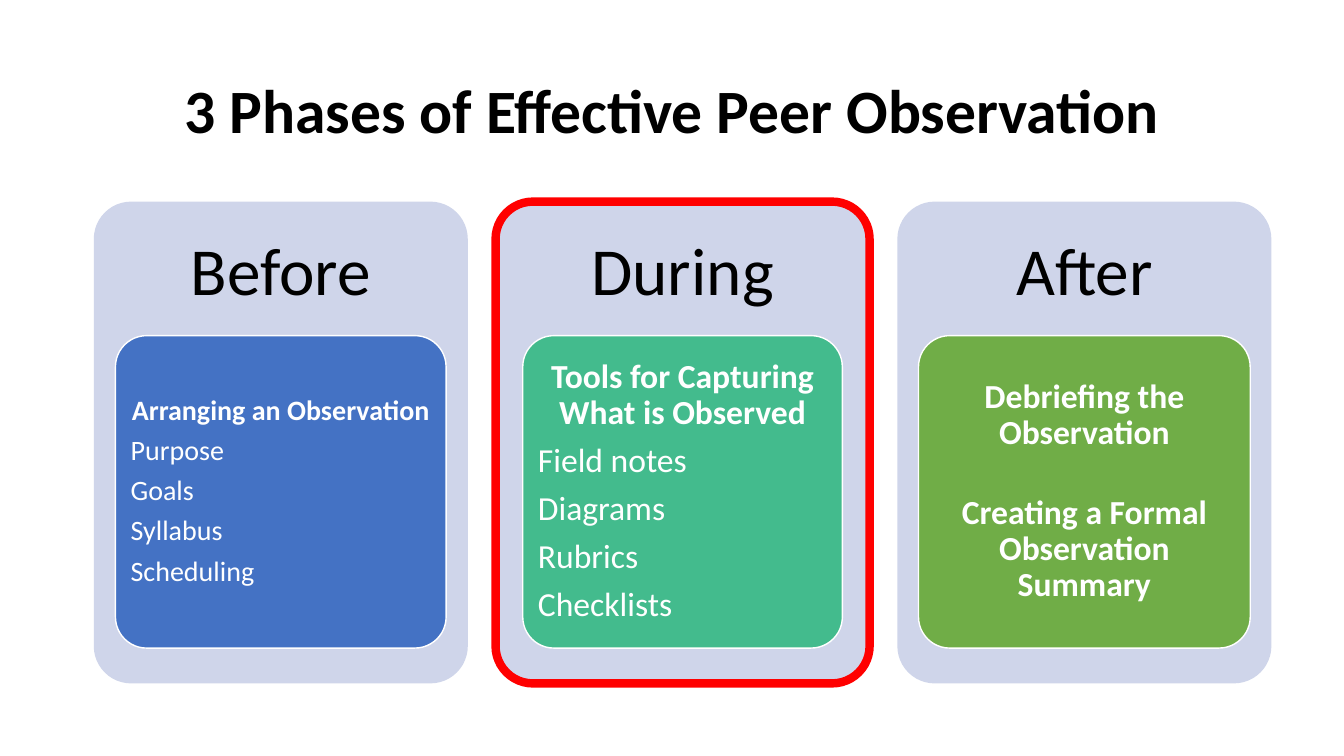
from collections import namedtuple

from pptx import Presentation
from pptx.dml.color import RGBColor
from pptx.enum import shapes, text
from pptx.util import Inches, Pt

BLACK = RGBColor(0x00, 0x00, 0x00)
WHITE = RGBColor(0xFF, 0xFF, 0xFF)
RED = RGBColor(0xFF, 0x00, 0x00)
LAVENDER = RGBColor(0xCF, 0xD5, 0xEA)
BLUE = RGBColor(0x44, 0x72, 0xC4)
TEAL = RGBColor(0x43, 0xBB, 0x8D)
GREEN = RGBColor(0x70, 0xAD, 0x47)

PANEL_LEFT, PANEL_TOP = 0.93, 2.0
PANEL_WIDTH, PANEL_HEIGHT = 3.71, 4.78
PANEL_STEP = 3.985
HEADING_HEIGHT = 1.43
CARD_TOP, CARD_HEIGHT = 3.33, 3.1

Phase = namedtuple("Phase", "name color card_width size headlines items gap outline")
PHASES = [
    Phase("Before", BLUE, 3.28, 20, ["Arranging an Observation"],
          ["Purpose", "Goals", "Syllabus", "Scheduling"], 7, None),
    Phase("During", TEAL, 3.17, 24, ["Tools for Capturing What is Observed"],
          ["Field notes", "Diagrams", "Rubrics", "Checklists"], 8.4, RED),
    Phase("After", GREEN, 3.29, 24,
          ["Debriefing the Observation", "Creating a Formal Observation Summary"],
          [], 30.8, None),
]


def set_frame(frame, inset_x, inset_y):
    frame.word_wrap = True
    frame.auto_size = text.MSO_AUTO_SIZE.NONE
    frame.vertical_anchor = text.MSO_ANCHOR.MIDDLE
    frame.margin_left = frame.margin_right = Inches(inset_x)
    frame.margin_top = frame.margin_bottom = Inches(inset_y)


def write(frame, words, size, color, bold=False, centred=True, after=0):
    """Fill the frame's first paragraph if it is empty, or else add one."""
    para = frame.paragraphs[0]
    if para.runs:
        para = frame.add_paragraph()
    para.alignment = text.PP_ALIGN.CENTER if centred else text.PP_ALIGN.LEFT
    para.line_spacing = 0.9
    para.space_before = Pt(0)
    para.space_after = Pt(after)
    span = para.add_run()
    span.text = words
    span.font.name = "Calibri"
    span.font.size = Pt(size)
    span.font.bold = bold
    span.font.color.rgb = color


def add_rounded(page, left, top, width, height, fill, line=None, line_width=1):
    box = page.shapes.add_shape(
        shapes.MSO_SHAPE.ROUNDED_RECTANGLE,
        Inches(left), Inches(top), Inches(width), Inches(height))
    box.adjustments[0] = 0.1
    box.shadow.inherit = False
    box.fill.solid()
    box.fill.fore_color.rgb = fill
    if line is None:
        box.line.fill.background()
    else:
        box.line.color.rgb = line
        box.line.width = Pt(line_width)
    return box


def add_title(page, words):
    title = page.shapes.title
    title.left, title.top = Inches(0.92), Inches(0.4)
    title.width, title.height = Inches(11.5), Inches(1.45)
    set_frame(title.text_frame, 0.1, 0.05)
    write(title.text_frame, words, 44, BLACK, bold=True)


def add_heading(page, left, words):
    heading = page.shapes.add_textbox(
        Inches(left), Inches(PANEL_TOP), Inches(PANEL_WIDTH), Inches(HEADING_HEIGHT))
    set_frame(heading.text_frame, 0.2, 0.2)
    write(heading.text_frame, words, 48, BLACK)


def add_phase(page, left, phase):
    add_rounded(page, left, PANEL_TOP, PANEL_WIDTH, PANEL_HEIGHT,
                LAVENDER, phase.outline, 6)
    add_heading(page, left, phase.name)
    card_left = left + (PANEL_WIDTH - phase.card_width) / 2
    card = add_rounded(page, card_left, CARD_TOP, phase.card_width, CARD_HEIGHT,
                       phase.color, WHITE)
    frame = card.text_frame
    set_frame(frame, 0.06, 0.04)
    for headline in phase.headlines:
        last = headline == phase.headlines[-1]
        after = 0.35 * phase.size if last else phase.gap
        write(frame, headline, phase.size, WHITE, bold=True, after=after)
    for item in phase.items:
        write(frame, item, phase.size, WHITE, centred=False, after=phase.gap)


def main():
    deck = Presentation()
    deck.slide_width, deck.slide_height = Inches(13.33), Inches(7.5)
    page = deck.slides.add_slide(deck.slide_layouts.get_by_name("Title Only"))
    add_title(page, "3 Phases of Effective Peer Observation")
    for index, phase in enumerate(PHASES):
        add_phase(page, PANEL_LEFT + index * PANEL_STEP, phase)
    deck.save("out.pptx")


if __name__ == "__main__":
    main()
